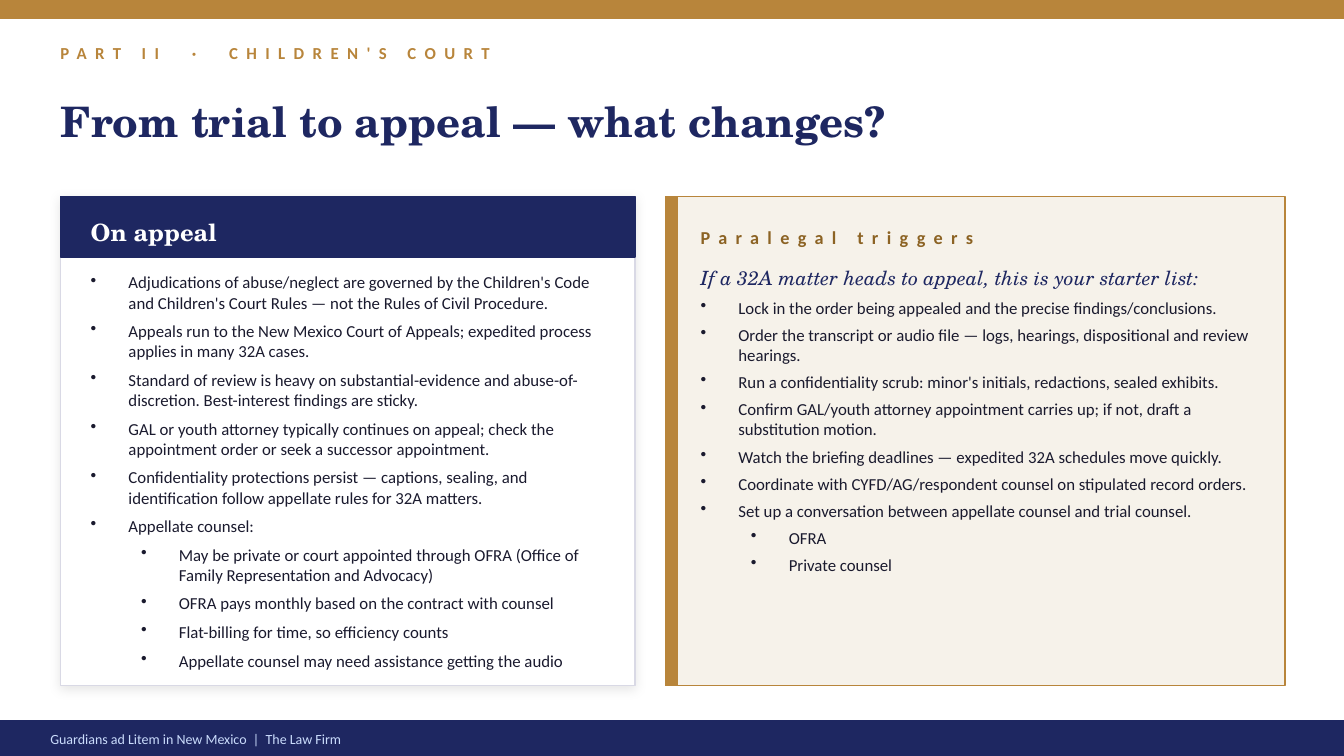
from dataclasses import dataclass

from lxml.etree import SubElement
from pptx import Presentation
from pptx.dml.color import RGBColor as RGB
from pptx.enum.shapes import MSO_SHAPE as SHAPE
from pptx.enum.text import MSO_ANCHOR as ANCHOR
from pptx.oxml.ns import qn
from pptx.util import Pt


@dataclass(frozen=True)
class Theme:
    # Colours
    navy: str = "1E2761"
    gold: str = "B8853B"
    bronze: str = "8C6324"
    cream: str = "F6F2EA"
    white: str = "FFFFFF"
    edge: str = "D9D9E5"
    ink: str = "1A1A2E"
    ice: str = "CADCFC"
    shade: str = "000000"
    # Fonts and type sizes
    sans: str = "Calibri"
    serif: str = "TeX Gyre Schola"
    title: int = 30
    heading: int = 17
    lead: int = 14
    label: int = 13
    body: int = 12
    footer: int = 10


class Deck:
    def __init__(self, theme, width, height):
        self.theme = theme
        self.prs = Presentation()
        self.prs.slide_width, self.prs.slide_height = Pt(width), Pt(height)
        self.slide = self.prs.slides.add_slide(self.prs.slide_layouts[6])

    def rect(self, box, fill, line=None, shadow=False):
        sp = self.slide.shapes.add_shape(SHAPE.RECTANGLE, *map(Pt, box))
        sp.fill.solid()
        sp.fill.fore_color.rgb = RGB.from_string(fill)
        sp.line.color.rgb = RGB.from_string(line or fill)
        sp.line.width = Pt(1)
        sp.shadow.inherit = False
        if shadow:
            self.soft_shadow(sp)
        return sp

    def soft_shadow(self, sp):
        effects = sp._element.spPr.find(qn("a:effectLst"))
        outer = SubElement(effects, qn("a:outerShdw"), blurRad=str(Pt(8)),
                           dist=str(Pt(2)), dir="5400000", algn="ctr",
                           rotWithShape="0")
        clr = SubElement(outer, qn("a:srgbClr"), val=self.theme.shade)
        SubElement(clr, qn("a:alpha"), val="10000")

    def frame(self, box, anchor):
        tf = self.slide.shapes.add_textbox(*map(Pt, box)).text_frame
        settings = dict(word_wrap=True, vertical_anchor=anchor, margin_left=0,
                        margin_top=0, margin_right=0, margin_bottom=0)
        for name, value in settings.items():
            setattr(tf, name, value)
        return tf

    def run(self, p, text, color, spacing=0, **fmt):
        r = p.add_run()
        r.text = text
        for name, value in fmt.items():
            setattr(r.font, name, value)
        r.font.color.rgb = RGB.from_string(color)
        if spacing:
            r._r.get_or_add_rPr().set("spc", str(spacing * 100))

    def text(self, box, text, color, size, **fmt):
        tf = self.frame(box, ANCHOR.MIDDLE)
        self.run(tf.paragraphs[0], text, color, size=Pt(size), **fmt)

    def bullets(self, box, items, gap):
        """Each item is a (level, text) pair."""
        t = self.theme
        tf = self.frame(box, ANCHOR.TOP)
        for i, (level, text) in enumerate(items):
            p = tf.add_paragraph() if i else tf.paragraphs[0]
            p.level = level
            p.space_after = Pt(gap)
            pPr = p._p.get_or_add_pPr()
            pPr.set("marL", str(Pt(27 + 36 * level)))
            pPr.set("indent", str(Pt(-27)))
            SubElement(pPr, qn("a:buChar"), char="•")
            self.run(p, text, t.ink, size=Pt(t.body), name=t.sans)


APPEAL = [
    (0, "Adjudications of abuse/neglect are governed by the Children's Code and "
        "Children's Court Rules — not the Rules of Civil Procedure."),
    (0, "Appeals run to the New Mexico Court of Appeals; expedited process "
        "applies in many 32A cases."),
    (0, "Standard of review is heavy on substantial-evidence and "
        "abuse-of-discretion. Best-interest findings are sticky."),
    (0, "GAL or youth attorney typically continues on appeal; check the "
        "appointment order or seek a successor appointment."),
    (0, "Confidentiality protections persist — captions, sealing, and "
        "identification follow appellate rules for 32A matters."),
    (0, "Appellate counsel:"),
    (1, "May be private or court appointed through OFRA (Office of Family "
        "Representation and Advocacy)"),
    (1, "OFRA pays monthly based on the contract with counsel"),
    (1, "Flat-billing for time, so efficiency counts"),
    (1, "Appellate counsel may need assistance getting the audio"),
]
TRIGGERS = [
    (0, "Lock in the order being appealed and the precise findings/conclusions."),
    (0, "Order the transcript or audio file — logs, hearings, dispositional and "
        "review hearings."),
    (0, "Run a confidentiality scrub: minor's initials, redactions, sealed "
        "exhibits."),
    (0, "Confirm GAL/youth attorney appointment carries up; if not, draft a "
        "substitution motion."),
    (0, "Watch the briefing deadlines — expedited 32A schedules move quickly."),
    (0, "Coordinate with CYFD/AG/respondent counsel on stipulated record orders."),
    (0, "Set up a conversation between appellate counsel and trial counsel."),
    (1, "OFRA"),
    (1, "Private counsel"),
]


def main():
    t = Theme()
    width, height = 960, 540
    deck = Deck(t, width, height)
    left, top, card_h = 43.2, 140.4, 349.2

    # Top band, section label and title
    deck.rect((0, 0, width, 13), t.gold)
    deck.text((left, 25.2, 864, 25.2), "PART II  ·  CHILDREN'S COURT", t.gold,
              t.body, name=t.sans, bold=True, spacing=6)
    deck.text((left, 50.4, 864, 72), "From trial to appeal — what changes?",
              t.navy, t.title, name=t.serif, bold=True)

    # Left card: on appeal
    card_w, pad = 410.4, 21.6
    inner_x, inner_w = left + pad, card_w - 2 * pad
    deck.rect((left, top, card_w, card_h), t.white, t.edge, shadow=True)
    deck.rect((left, top, card_w, 43.2), t.navy)
    deck.text((inner_x, top + 10.8, inner_w, 28.8), "On appeal", t.white,
              t.heading, name=t.serif, bold=True)
    deck.bullets((inner_x, top + 54, inner_w, 288), APPEAL, gap=6)

    # Right card: paralegal triggers
    panel_x, row = 475.2, 28.8
    inner_x, inner_y, inner_w = panel_x + 25.2, top + 14.4, 406.8
    deck.rect((panel_x, top, 442.8, card_h), t.cream, t.gold)
    deck.rect((panel_x, top, 8.64, card_h), t.gold)
    deck.text((inner_x, inner_y, inner_w, row), "Paralegal triggers", t.bronze,
              t.label, name=t.sans, bold=True, spacing=6)
    deck.text((inner_x, inner_y + row, inner_w, row),
              "If a 32A matter heads to appeal, this is your starter list:",
              t.navy, t.lead, name=t.serif, italic=True)
    deck.bullets((inner_x, inner_y + 2 * row, inner_w, 266.4), TRIGGERS, gap=5)

    # Footer
    deck.rect((0, height - 25.2, width, 25.2), t.navy)
    deck.text((36, 517, 576, 21.6),
              "Guardians ad Litem in New Mexico  |  The Law Firm", t.ice,
              t.footer, name=t.sans)

    deck.prs.save("out.pptx")


if __name__ == "__main__":
    main()
